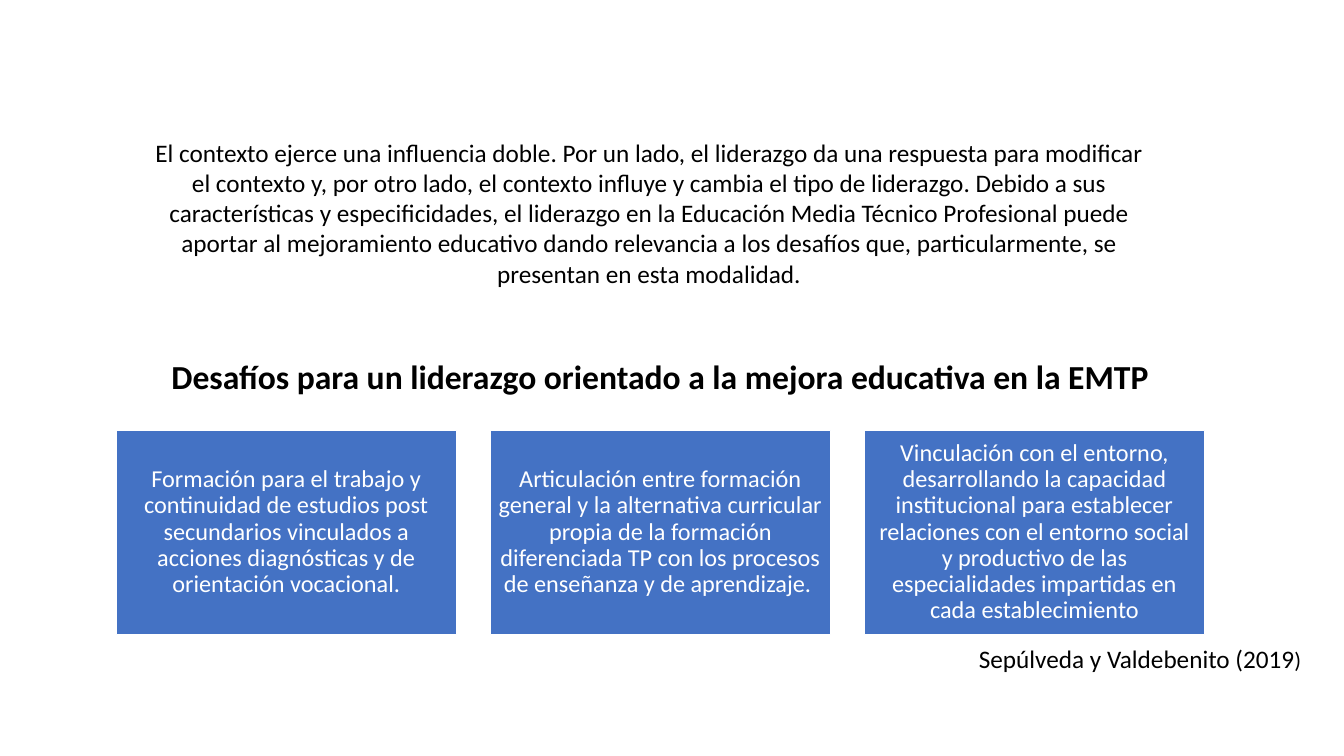
from dataclasses import dataclass

from pptx import Presentation
from pptx.dml.color import RGBColor
from pptx.enum.shapes import MSO_SHAPE as Shape
from pptx.enum.text import MSO_ANCHOR as Anchor, PP_ALIGN as Align
from pptx.util import Cm, Pt


@dataclass(frozen=True)
class Theme:
    font: str = "Calibri"
    ink: RGBColor = RGBColor(0x00, 0x00, 0x00)
    paper: RGBColor = RGBColor(0xFF, 0xFF, 0xFF)
    accent: RGBColor = RGBColor(0x44, 0x72, 0xC4)
    heading: int = 36
    body: int = 27
    card: int = 26
    small: int = 24


@dataclass(frozen=True)
class Box:
    """A rectangle in centimetres."""
    left: float
    top: float
    width: float
    height: float

    def lengths(self):
        return [Cm(side) for side in (self.left, self.top, self.width, self.height)]


THEME = Theme()

CONTEXT = (
    "El contexto ejerce una influencia doble. Por un lado, el liderazgo da una "
    "respuesta para modificar el contexto y, por otro lado, el contexto influye y "
    "cambia el tipo de liderazgo. Debido a sus características y especificidades, el "
    "liderazgo en la Educación Media Técnico Profesional puede aportar al mejoramiento "
    "educativo dando relevancia a los desafíos que, particularmente, se presentan en "
    "esta modalidad."
)
HEADING = "Desafíos para un liderazgo orientado a la mejora educativa en la EMTP"
CHALLENGES = [
    "Formación para el trabajo y continuidad de estudios post secundarios vinculados "
    "a acciones diagnósticas y de orientación vocacional.",
    "Articulación entre formación general y la alternativa curricular propia de la "
    "formación diferenciada TP con los procesos de enseñanza y de aprendizaje. ",
    "Vinculación con el entorno, desarrollando la capacidad institucional para "
    "establecer relaciones con el entorno social y productivo de las especialidades "
    "impartidas en cada establecimiento",
]


def write(para, text, size, color=THEME.ink, bold=False, align=None, spacing=None):
    """Add a span of text to a paragraph; align and spacing apply to the whole paragraph."""
    span = para.add_run()
    span.text = text
    span.font.name = THEME.font
    span.font.size = Pt(size)
    span.font.bold = bold
    span.font.color.rgb = color
    if align is not None:
        para.alignment = align
    if spacing is not None:
        para.line_spacing = spacing


def add_text_area(page, box, anchor=Anchor.TOP):
    """Add an empty wrapping text box and return its first paragraph."""
    frame = page.shapes.add_textbox(*box.lengths()).text_frame
    frame.word_wrap = True
    frame.vertical_anchor = anchor
    return frame.paragraphs[0]


def add_context(page, box):
    write(add_text_area(page, box), CONTEXT, THEME.body, align=Align.CENTER)


def add_heading(page, box):
    para = add_text_area(page, box, Anchor.MIDDLE)
    write(para, HEADING, THEME.heading, bold=True, align=Align.CENTER, spacing=0.9)


def add_card(page, box, text):
    card = page.shapes.add_shape(Shape.RECTANGLE, *box.lengths())
    card.shadow.inherit = False
    card.fill.solid()
    card.fill.fore_color.rgb = THEME.accent
    card.line.color.rgb = THEME.paper
    card.line.width = Pt(1)
    frame = card.text_frame
    frame.word_wrap = True
    frame.vertical_anchor = Anchor.MIDDLE
    frame.margin_left = frame.margin_right = Cm(0.28)
    frame.margin_top = frame.margin_bottom = Cm(0.28)
    write(frame.paragraphs[0], text, THEME.card, color=THEME.paper,
          align=Align.CENTER, spacing=0.9)


def add_challenges(page, box, gap=1.29):
    """Share the box equally among the challenge cards."""
    count = len(CHALLENGES)
    width = (box.width - gap * (count - 1)) / count
    for index, text in enumerate(CHALLENGES):
        left = box.left + index * (width + gap)
        add_card(page, Box(left, box.top, width, box.height), text)


def add_citation(page, box):
    para = add_text_area(page, box)
    write(para, "Sepúlveda y Valdebenito (2019", THEME.body)
    write(para, ")", THEME.small)


def main():
    deck = Presentation()
    deck.slide_width, deck.slide_height = Cm(50.8), Cm(28.58)
    page = deck.slides.add_slide(deck.slide_layouts[6])
    add_heading(page, Box(6.15, 11.94, 37.62, 4.72))
    add_citation(page, Box(36.75, 24.21, 13.7, 1.42))
    add_challenges(page, Box(4.4, 16.26, 41.13, 7.72))
    add_context(page, Box(5.26, 5.05, 38.53, 7.19))
    deck.save("out.pptx")


if __name__ == "__main__":
    main()
